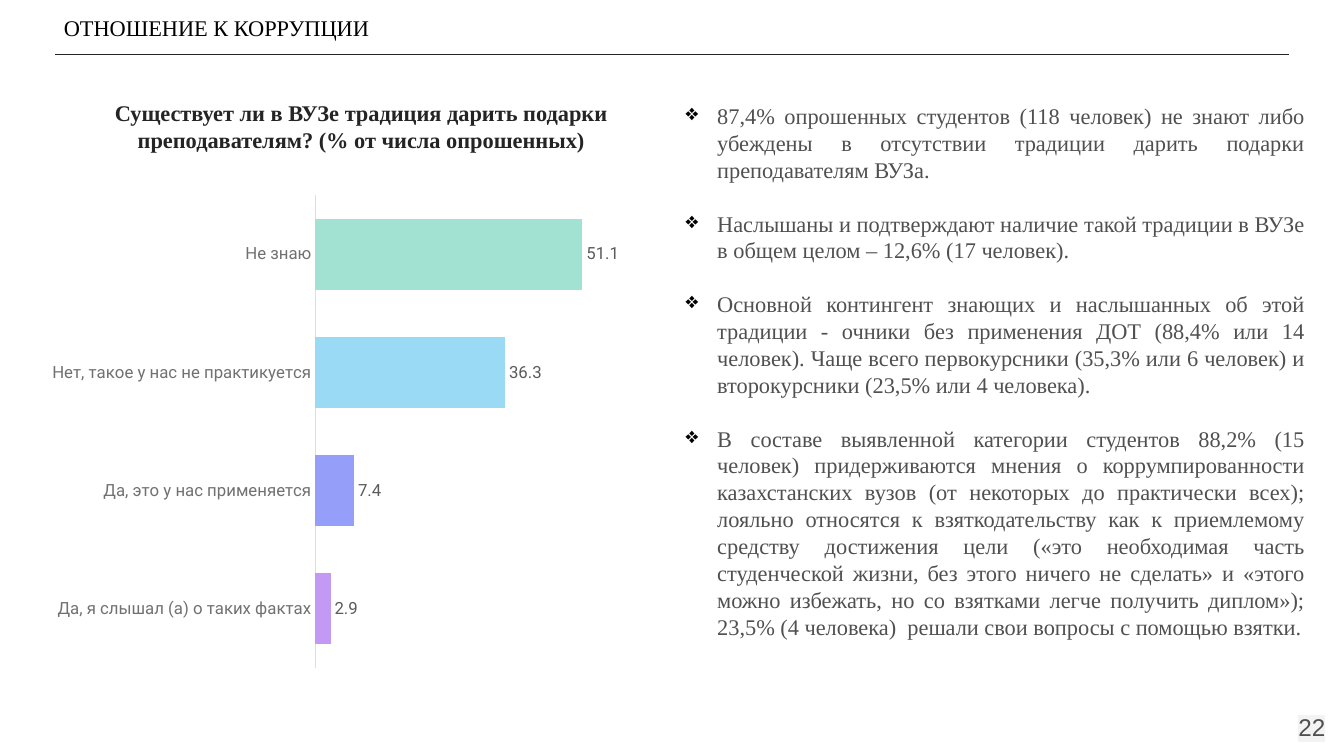
from dataclasses import dataclass, field

from lxml import etree
from pptx import Presentation
from pptx import util as u
from pptx.chart.data import CategoryChartData
from pptx.dml.color import RGBColor
from pptx.enum import chart as charts, shapes, text
from pptx.oxml import parse_xml
from pptx.oxml.ns import nsdecls, qn

Pt = u.Pt
COLORS = {
    "ink": "242424", "black": "000000", "body": "505050", "number_back": "F3F3F3",
    "category": "717171", "value": "5B5B5B", "axis": "DEDEDE", "series": "62CFB5",
    "heard": "C29AF4", "applied": "959FFA", "not_practised": "9ADAF4", "unknown": "A1E2D3",
}
SERIF = "Times New Roman"
BULLET_INDENT = 22.5
BULLET_GAP = 19.2


@dataclass
class Note:
    lines: list[str]
    box: tuple[float, float, float, float]
    color: str
    align: text.PP_ALIGN = text.PP_ALIGN.LEFT
    inset: float = 9.6
    anchor: text.MSO_ANCHOR = text.MSO_ANCHOR.TOP
    font: dict = field(default_factory=lambda: {"name": SERIF, "size": Pt(16)})
    highlight: str = ""
    bullets: bool = False


@dataclass
class Answer:
    label: str
    percent: float
    color: str


FINDINGS = [
    "87,4% опрошенных студентов (118 человек) не знают либо убеждены в отсутствии "
    "традиции дарить подарки преподавателям ВУЗа.",
    "Наслышаны и подтверждают наличие такой традиции в ВУЗе в общем целом – 12,6% (17 человек).",
    "Основной контингент знающих и наслышанных об этой традиции - очники без применения ДОТ "
    "(88,4% или 14 человек). Чаще всего первокурсники (35,3% или 6 человек) и второкурсники "
    "(23,5% или 4 человека).",
    "В составе выявленной категории студентов 88,2% (15 человек) придерживаются мнения о "
    "коррумпированности казахстанских вузов (от некоторых до практически всех); лояльно "
    "относятся к взяткодательству как к приемлемому средству достижения цели («это необходимая "
    "часть студенческой жизни, без этого ничего не сделать» и «этого можно избежать, но со "
    "взятками легче получить диплом»); 23,5% (4 человека)  решали свои вопросы с помощью взятки.",
]
NOTES = [
    Note(["Существует ли в ВУЗе традиция дарить подарки преподавателям? (% от числа опрошенных)"],
         (36, 63.4, 444, 85.7), "ink", text.PP_ALIGN.CENTER, inset=7.2,
         font={"name": SERIF, "size": Pt(16), "bold": True}),
    Note(["22"], (898.6, 499, 57.6, 41), "body", text.PP_ALIGN.RIGHT,
         anchor=text.MSO_ANCHOR.MIDDLE, font={"name": "Arial", "size": Pt(17.3)},
         highlight="number_back"),
    Note(["ОТНОШЕНИЕ К КОРРУПЦИИ"], (36, 0, 879, 38.9), "black",
         anchor=text.MSO_ANCHOR.MIDDLE),
    Note(FINDINGS, (480.2, 63.4, 461.5, 464.4), "body", text.PP_ALIGN.JUSTIFY, bullets=True),
]
ANSWERS = [
    Answer("Да, я слышал (а) о таких фактах", 2.9, "heard"),
    Answer("Да, это у нас применяется", 7.4, "applied"),
    Answer("Нет, такое у нас не практикуется", 36.3, "not_practised"),
    Answer("Не знаю", 51.1, "unknown"),
]


def rgb(color: str) -> RGBColor:
    return RGBColor.from_string(COLORS[color])


def set_format(target, values: dict) -> None:
    for name, value in values.items():
        setattr(target, name, value)


def set_font(font, values: dict, color: str) -> None:
    set_format(font, values)
    font.color.rgb = rgb(color)


def add_bullet(paragraph) -> None:
    properties = paragraph._p.get_or_add_pPr()
    properties.set("marL", str(Pt(BULLET_INDENT)))
    properties.set("indent", str(-Pt(BULLET_INDENT)))
    color = etree.SubElement(properties, qn("a:buClr"))
    etree.SubElement(color, qn("a:srgbClr"), val=COLORS["black"])
    etree.SubElement(properties, qn("a:buChar"), char="❖")


def add_highlight(run, color: str) -> None:
    mark = etree.Element(qn("a:highlight"))
    etree.SubElement(mark, qn("a:srgbClr"), val=COLORS[color])
    run._r.rPr.find(qn("a:solidFill")).addnext(mark)


def add_note(slide, note: Note) -> None:
    frame = slide.shapes.add_textbox(*map(Pt, note.box)).text_frame
    set_format(frame, {"word_wrap": True, "vertical_anchor": note.anchor})
    set_format(frame, {f"margin_{side}": Pt(note.inset)
                       for side in ("left", "top", "right", "bottom")})
    for index, line in enumerate(note.lines):
        paragraph = frame.add_paragraph() if index else frame.paragraphs[0]
        paragraph.alignment = note.align
        if index:
            paragraph.space_before = Pt(BULLET_GAP)
        if note.bullets:
            add_bullet(paragraph)
        run = paragraph.add_run()
        run.text = line
        set_font(run.font, note.font, note.color)
        if note.highlight:
            add_highlight(run, note.highlight)


def add_header_rule(slide) -> None:
    rule = slide.shapes.add_connector(
        shapes.MSO_CONNECTOR.STRAIGHT, Pt(39.6), Pt(38.9), Pt(920.9), Pt(38.9))
    rule.line.color.rgb = rgb("ink")
    rule.line.width = Pt(0.75)
    etree.SubElement(rule._element.spPr, qn("a:effectLst"))


def place_plot(chart, **edges: float) -> None:
    area = chart._chartSpace.chart.plotArea
    for layout in area.findall(qn("c:layout")):
        area.remove(layout)
    sizes = "".join(f'<c:{name} val="{value}"/>' for name, value in edges.items())
    area.insert(0, parse_xml(
        f'<c:layout {nsdecls("c")}><c:manualLayout><c:layoutTarget val="inner"/>'
        f'<c:xMode val="edge"/><c:yMode val="edge"/>{sizes}</c:manualLayout></c:layout>'))


def add_answer_chart(slide, answers: list[Answer]) -> None:
    data = CategoryChartData()
    data.categories = [answer.label for answer in answers]
    data.add_series("Series 1", [answer.percent for answer in answers])
    chart = slide.shapes.add_chart(
        charts.XL_CHART_TYPE.BAR_CLUSTERED, Pt(23), Pt(125.3), Pt(430.6), Pt(352), data).chart
    set_format(chart, {"has_legend": False, "has_title": False})
    set_font(chart.font, {"name": "Arial", "size": Pt(10)}, "ink")
    place_plot(chart, x=0.47, y=0.04, w=0.52, h=0.96)

    # Axes
    label_font = {"name": "Roboto", "size": Pt(12)}
    answer_axis = chart.category_axis
    set_format(answer_axis, {"major_tick_mark": charts.XL_TICK_MARK.NONE,
                             "has_major_gridlines": False})
    set_font(answer_axis.tick_labels.font, label_font, "category")
    answer_axis.format.line.color.rgb = rgb("axis")
    answer_axis.format.line.width = Pt(0.75)
    set_format(chart.value_axis, {"visible": False, "has_major_gridlines": False,
                                  "minimum_scale": 0, "maximum_scale": 60})

    # Bars and their values
    plot = chart.plots[0]
    set_format(plot, {"gap_width": 66, "vary_by_categories": False, "has_data_labels": True})
    set_format(plot.data_labels, {"show_value": True,
                                  "position": charts.XL_LABEL_POSITION.OUTSIDE_END})
    set_font(plot.data_labels.font, label_font, "value")
    bars = plot.series[0]
    bars.format.fill.solid()
    bars.format.fill.fore_color.rgb = rgb("series")
    for index, answer in enumerate(answers):
        fill = bars.points[index].format.fill
        fill.solid()
        fill.fore_color.rgb = rgb(answer.color)


def main() -> None:
    deck = Presentation()
    set_format(deck, {"slide_width": Pt(960), "slide_height": Pt(540)})
    slide = deck.slides.add_slide(deck.slide_layouts[6])
    add_header_rule(slide)
    for note in NOTES:
        add_note(slide, note)
    add_answer_chart(slide, ANSWERS)
    deck.save("out.pptx")


if __name__ == "__main__":
    main()
